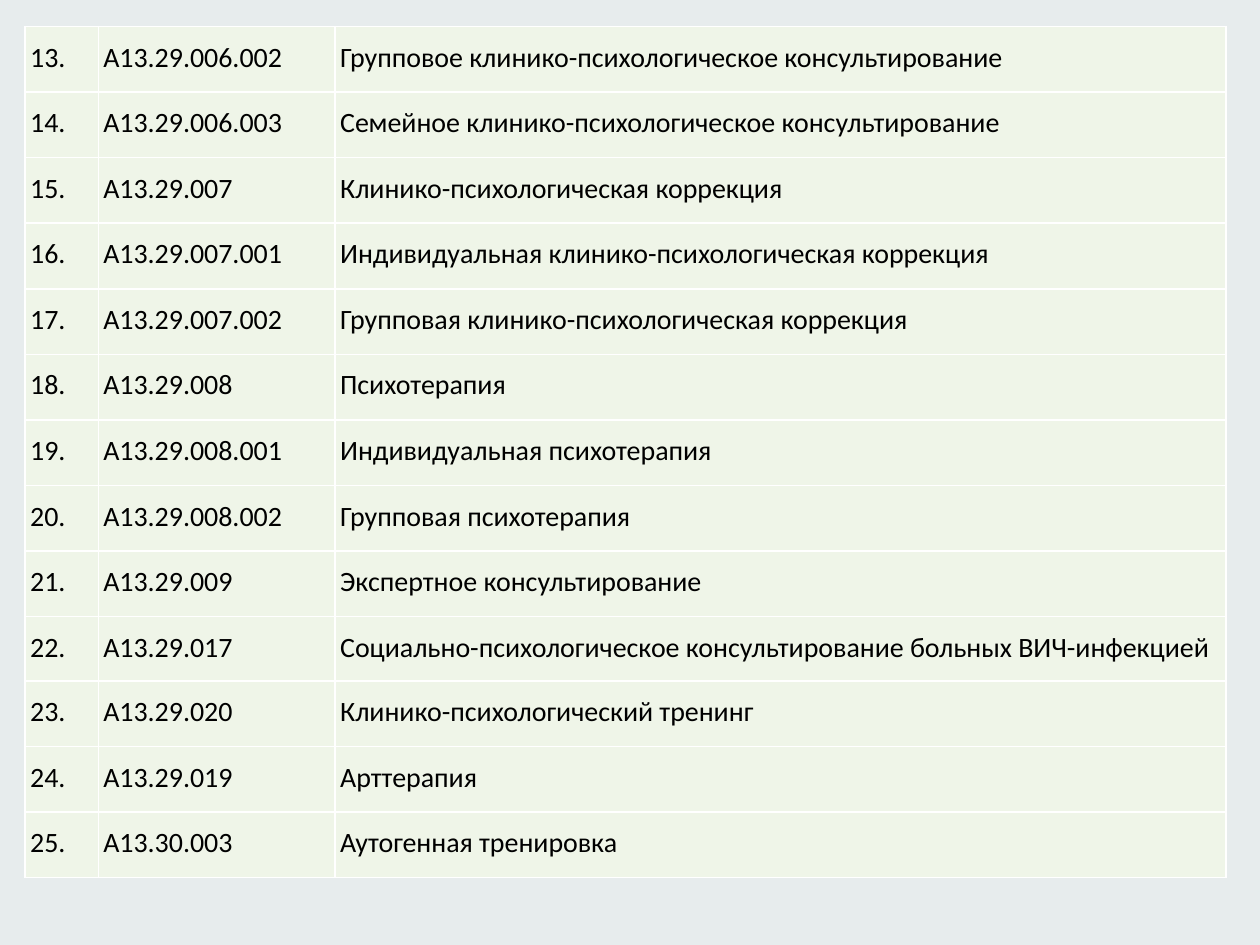
from typing import NamedTuple

from lxml import etree
from pptx import Presentation
from pptx import util as u
from pptx.dml.color import RGBColor
from pptx.enum import text
from pptx.oxml.ns import qn

WIDE, HIGH = 10, 7.5
LEFT, TOP = 0.2, 0.21
COLS = (0.58, 1.88, 7.07)
TALL, SHORT = 6.76, 0.51
FIRST = 13
TIGHT = 22  # number of the slightly lower row
BACK, FILL, INK, RULE = "E7ECED", "EFF5E8", "000000", "FFFFFF"


class Service(NamedTuple):
    code: str
    name: str


SERVICES = [
    Service("A13.29.006.002", "Групповое клинико-психологическое консультирование"),
    Service("A13.29.006.003", "Семейное клинико-психологическое консультирование"),
    Service("A13.29.007", "Клинико-психологическая коррекция"),
    Service("A13.29.007.001", "Индивидуальная клинико-психологическая коррекция"),
    Service("A13.29.007.002", "Групповая клинико-психологическая коррекция"),
    Service("A13.29.008", "Психотерапия"),
    Service("A13.29.008.001", "Индивидуальная психотерапия"),
    Service("A13.29.008.002", "Групповая психотерапия"),
    Service("A13.29.009", "Экспертное консультирование"),
    Service("A13.29.017", "Социально-психологическое консультирование больных ВИЧ-инфекцией"),
    Service("A13.29.020", "Клинико-психологический тренинг"),
    Service("A13.29.019", "Арттерапия"),
    Service("A13.30.003", "Аутогенная тренировка"),
]


def paint(fill, tint: str) -> None:
    fill.solid()
    fill.fore_color.rgb = RGBColor.from_string(tint)


def edge(cell) -> None:
    """Rule all four sides; must run before the cell is filled."""
    props = cell._tc.get_or_add_tcPr()
    for side in ("lnL", "lnR", "lnT", "lnB"):
        line = etree.SubElement(props, qn(f"a:{side}"), w=str(u.Pt(1)))
        solid = etree.SubElement(line, qn("a:solidFill"))
        etree.SubElement(solid, qn("a:srgbClr"), val=RULE)


def write(cell, words: str) -> None:
    edge(cell)
    paint(cell.fill, FILL)
    cell.margin_left = cell.margin_right = u.Inches(0.04)
    cell.margin_top = cell.margin_bottom = u.Inches(0.07)
    cell.vertical_anchor = text.MSO_ANCHOR.TOP
    para = cell.text_frame.paragraphs[0]
    para.text = words
    para.alignment = text.PP_ALIGN.JUSTIFY
    para.line_spacing = 1.15
    font = para.runs[0].font
    font.name, font.size = "Calibri", u.Pt(16)
    paint(font.fill, INK)


def draw(slide, items: list[Service]) -> None:
    frame = slide.shapes.add_table(
        len(items), len(COLS), u.Inches(LEFT), u.Inches(TOP),
        u.Inches(sum(COLS)), u.Inches(TALL))
    table = frame.table
    table.first_row = table.horz_banding = False
    for col, width in zip(table.columns, COLS):
        col.width = u.Inches(width)
    pitch = (TALL - SHORT) / (len(items) - 1)
    for num, (row, item) in enumerate(zip(table.rows, items), FIRST):
        row.height = u.Inches(SHORT if num == TIGHT else pitch)
        for cell, words in zip(row.cells, (f"{num}.", *item)):
            write(cell, words)


def main() -> None:
    deck = Presentation()
    deck.slide_width, deck.slide_height = u.Inches(WIDE), u.Inches(HIGH)
    slide = deck.slides.add_slide(deck.slide_layouts[6])
    paint(slide.background.fill, BACK)
    draw(slide, SERVICES)
    deck.save("out.pptx")


if __name__ == "__main__":
    main()
